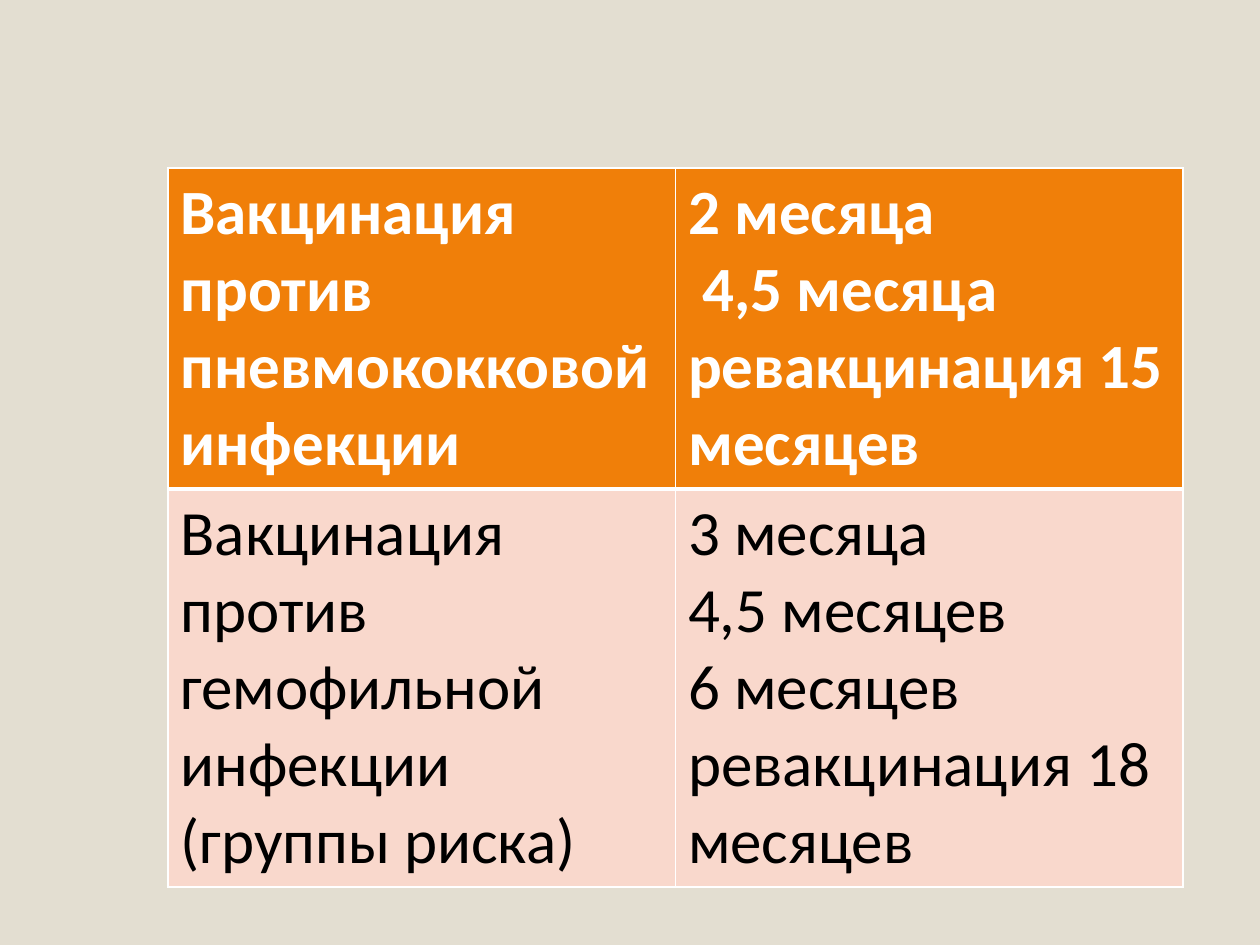
"""Build a one-slide table of vaccination ages."""
from dataclasses import dataclass

from pptx import Presentation
from pptx import util as u
from pptx.dml.color import RGBColor
from pptx.oxml import parse_xml
from pptx.oxml.ns import nsdecls

WHITE = "FFFFFF"
THIN, THICK = 1, 3


@dataclass(frozen=True)
class TableRow:
    height: float
    fill: str
    color: str
    bold: bool
    top: float
    bottom: float
    cells: tuple[str, ...]


ROWS = (
    TableRow(142.5, "F07F09", WHITE, True, THIN, THICK, (
        "Вакцинация против пневмококковой инфекции",
        "2 месяца\n 4,5 месяца\nревакцинация 15 месяцев",
    )),
    TableRow(176.5, "F9D8CC", "000000", False, THICK, THIN, (
        "Вакцинация против гемофильной инфекции (группы риска)",
        "3 месяца\n4,5 месяцев\n6 месяцев\nревакцинация 18 месяцев",
    )),
)


def paint(target, color: str) -> None:
    target.solid()
    target.fore_color.rgb = RGBColor.from_string(color)


def add_borders(cell, top: float, bottom: float) -> None:
    properties = cell._tc.get_or_add_tcPr()
    sides = {"lnL": THIN, "lnR": THIN, "lnT": top, "lnB": bottom}
    for index, (side, width) in enumerate(sides.items()):
        properties.insert(index, parse_xml(
            f'<a:{side} {nsdecls("a")} w="{u.Pt(width)}"><a:solidFill>'
            f'<a:srgbClr val="{WHITE}"/></a:solidFill></a:{side}>'
        ))


def fill_cell(cell, text: str, row: TableRow) -> None:
    cell.text_frame.text = text
    for para in cell.text_frame.paragraphs:
        for span in para.runs:
            span.font.name = "Calibri"
            span.font.size = u.Pt(36)
            span.font.bold = row.bold
            paint(span.font.fill, row.color)
    paint(cell.fill, row.fill)
    add_borders(cell, row.top, row.bottom)


def add_schedule(page, rows: tuple[TableRow, ...]) -> None:
    frame = page.shapes.add_table(
        len(rows), len(rows[0].cells), u.Pt(96), u.Pt(96), u.Pt(580), u.Pt(403)
    )
    for row_index, row in enumerate(rows):
        frame.table.rows[row_index].height = u.Pt(row.height)
        for column_index, text in enumerate(row.cells):
            fill_cell(frame.table.cell(row_index, column_index), text, row)
    frame.height = u.Pt(403)


def main() -> None:
    deck = Presentation()
    deck.slide_width, deck.slide_height = u.Pt(720), u.Pt(540)
    page = deck.slides.add_slide(deck.slide_layouts[6])
    paint(page.background.fill, "E3DED1")
    add_schedule(page, ROWS)
    deck.save("out.pptx")


if __name__ == "__main__":
    main()
